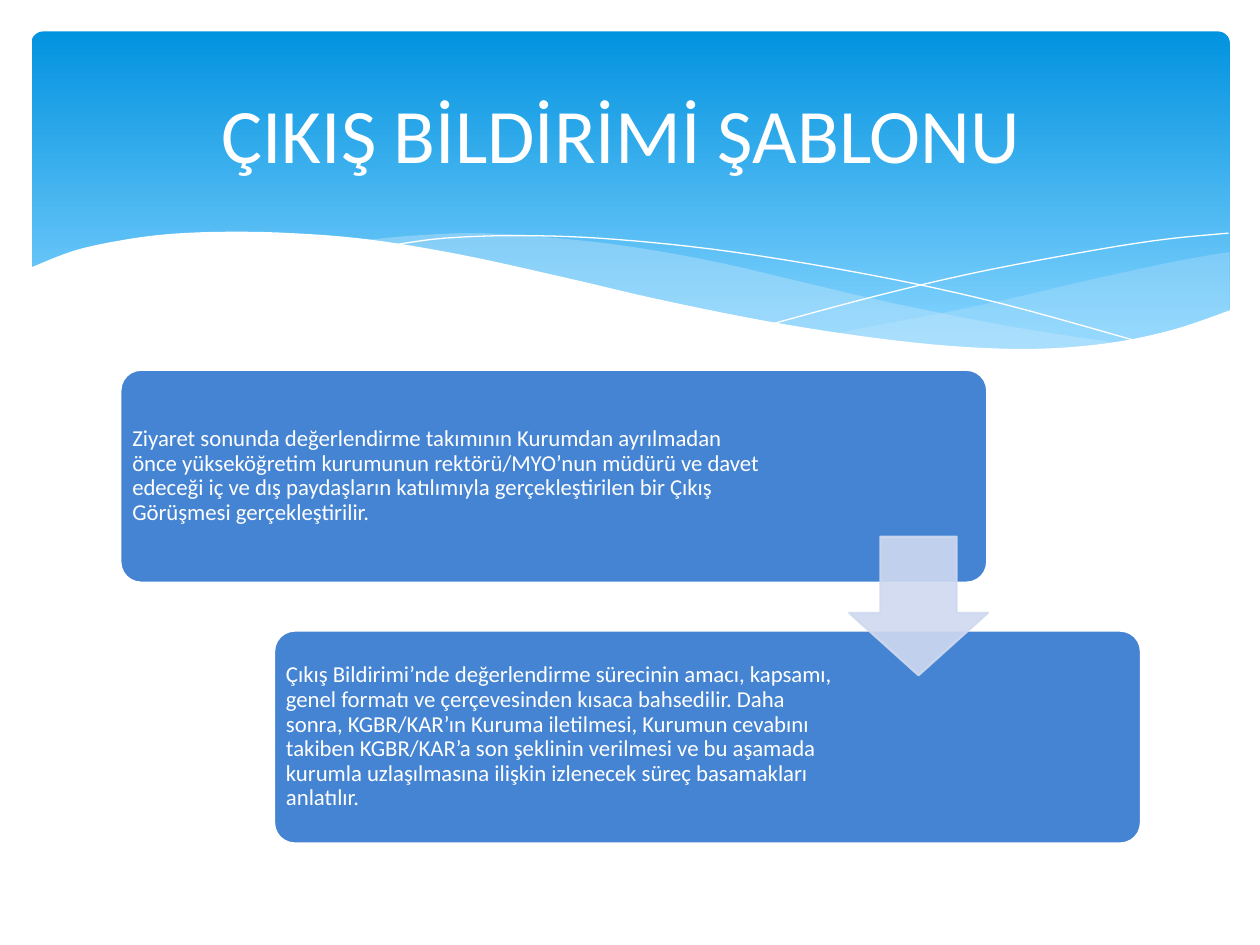
from pptx import Presentation
from pptx.dml.color import RGBColor
from pptx.enum.shapes import MSO_SHAPE
from pptx.enum.text import MSO_ANCHOR, PP_ALIGN
from pptx.oxml import parse_xml
from pptx.oxml.ns import nsdecls
from pptx.util import Inches, Pt

ROUNDED = MSO_SHAPE.ROUNDED_RECTANGLE
DOWN_ARROW = MSO_SHAPE.DOWN_ARROW
MIDDLE = MSO_ANCHOR.MIDDLE
CENTER, LEFT = PP_ALIGN.CENTER, PP_ALIGN.LEFT

COLUMNS, ROWS = 100, 75
TITLE_ONLY = 5
WHITE, STEP_BLUE, ARROW_BLUE, WAVE_BLUE = "FFFFFF", "4584D3", "CFD9EF", "C6E7FC"

# Wave outlines as key points (column, row); each list is one smooth edge
RIGHT_WAVE = [
    [(97.6, 20), (93.5, 20.7), (86.1, 22.3), (77.9, 24.2), (66.1, 26.5)],
    [(66.1, 26.5), (71.9, 27.2), (78.1, 27.7), (84.4, 27.7),
     (89.7, 27), (94.2, 25.9), (97.6, 24.7)],
]
MIDDLE_WAVE = [
    [(89.3, 27.3), (80.7, 26), (70.6, 24), (62.9, 22.2), (56.9, 20.8), (50.2, 19.6),
     (44.2, 18.9), (38, 18.5), (32.8, 18.7), (28.6, 19.1)],
    [(28.6, 19.1), (36.2, 20.3), (44.9, 22.2), (56.6, 24.8), (65, 26.4),
     (73.6, 27.5), (81.8, 27.8), (89.3, 27.3)],
]
FALLING_LINE = [[(30.9, 19.5), (35.3, 18.9), (41.6, 18.7), (48.9, 19), (58.2, 20),
                 (69.5, 21.9), (79.5, 24.1), (90.7, 27.2)]]
RISING_LINE = [[(61.3, 25.7), (69.5, 23.5), (77.6, 21.6), (86.6, 19.9),
                (92.4, 19), (97.5, 18.5)]]
WHITE_WAVE = [
    [(97.7, 24.6), (93, 26.2), (87.5, 27.3), (80.9, 27.7), (72.6, 27.2),
     (62.6, 25.8), (52.9, 23.9), (44.7, 22), (36.5, 20.2), (29.2, 19),
     (23, 18.5), (17.7, 18.4), (13.2, 18.6), (9.5, 19.1), (5.9, 19.9), (2.3, 21.3)],
    [(2.3, 32.9), (97.7, 32.9)],
]

STEPS = [
    (9.5, 29.3, 51.3,
     "Ziyaret sonunda değerlendirme takımının Kurumdan ayrılmadan önce "
     "yükseköğretim kurumunun rektörü/MYO’nun müdürü ve davet edeceği iç ve dış "
     "paydaşların katılımıyla gerçekleştirilen bir Çıkış Görüşmesi gerçekleştirilir."),
    (21.7, 50, 44.7,
     "Çıkış Bildirimi’nde değerlendirme sürecinin amacı, kapsamı, genel formatı ve "
     "çerçevesinden kısaca bahsedilir. Daha sonra, KGBR/KAR’ın Kuruma iletilmesi, "
     "Kurumun cevabını takiben KGBR/KAR’a son şeklinin verilmesi ve bu aşamada "
     "kurumla uzlaşılmasına ilişkin izlenecek süreç basamakları anlatılır."),
]
STEP_WIDTH, STEP_HEIGHT, STEP_INSET = 68.9, 17, 0.5


def rgb(color):
    return RGBColor.from_string(color)


def smooth_edge(knots, pieces=6):
    """Sample a Catmull-Rom curve through the knots."""
    padded = [knots[0], *knots, knots[-1]]
    points = [knots[0]]
    for a, b, c, d in zip(padded, padded[1:], padded[2:], padded[3:]):
        for piece in range(1, pieces + 1):
            t = piece / pieces
            points.append(tuple(
                q + 0.5 * t * (r - p + t * (2 * p - 5 * q + 4 * r - s
                                            + t * (3 * (q - r) + s - p)))
                for p, q, r, s in zip(a, b, c, d)))
    return points


class Deck:
    font = "Calibri"

    def __init__(self):
        self.presentation = Presentation()
        self.presentation.slide_width = Inches(10)
        self.presentation.slide_height = Inches(7.5)
        layout = self.presentation.slide_layouts[TITLE_ONLY]
        self.slide = self.presentation.slides.add_slide(layout)
        self.shapes = self.slide.shapes

    def at(self, column, row):
        return (round(self.presentation.slide_width * column / COLUMNS),
                round(self.presentation.slide_height * row / ROWS))

    def paint(self, shape, fill=None, opacity=100, line=None, line_width=0):
        shape.shadow.inherit = False
        if fill:
            shape.fill.solid()
            shape.fill.fore_color.rgb = rgb(fill)
        else:
            shape.fill.background()
        if line:
            shape.line.color.rgb = rgb(line)
            shape.line.width = Pt(line_width)
        else:
            shape.line.fill.background()
        if opacity < 100:
            for color in shape.element.spPr.xpath(".//a:srgbClr"):
                color.append(parse_xml(
                    f'<a:alpha {nsdecls("a")} val="{opacity * 1000}"/>'))

    def shape(self, kind, column, row, width, height, adjustments, **look):
        shape = self.shapes.add_shape(kind, *self.at(column, row), *self.at(width, height))
        for index, value in enumerate(adjustments):
            shape.adjustments[index] = value
        self.paint(shape, **look)
        return shape

    def wave(self, edges, **look):
        points = [self.at(*point) for edge in edges for point in smooth_edge(edge)]
        builder = self.shapes.build_freeform(*points[0])
        builder.add_line_segments(points[1:], close="fill" in look)
        self.paint(builder.convert_to_shape(), **look)

    def set_text(self, frame, wording, size, align):
        frame.word_wrap = True
        frame.vertical_anchor = MIDDLE
        frame.text = wording
        paragraph = frame.paragraphs[0]
        paragraph.alignment = align
        paragraph.font.name = self.font
        paragraph.font.size = Pt(size)
        paragraph.font.color.rgb = rgb(WHITE)
        return paragraph

    def title(self, column, row, width, height, wording):
        title = self.shapes.title
        title.left, title.top = self.at(column, row)
        title.width, title.height = self.at(width, height)
        self.set_text(title.text_frame, wording, 44, CENTER)
        # Bring the title in front of the banner
        title.element.getparent().append(title.element)

    def text(self, column, row, width, height, wording):
        box = self.shapes.add_textbox(*self.at(column, row), *self.at(width, height))
        frame = box.text_frame
        frame.margin_left = frame.margin_right = Inches(0.05)
        frame.margin_top = frame.margin_bottom = Inches(0.05)
        self.set_text(frame, wording, 13, LEFT).line_spacing = 0.9

    def banner(self, column, row, width, height, top_color, bottom_color):
        banner = self.shape(ROUNDED, column, row, width, height, [0.034])
        banner.fill.gradient()
        banner.fill.gradient_angle = 270
        for stop, color, position in zip(banner.fill.gradient_stops,
                                         (top_color, bottom_color), (0, 0.9)):
            stop.color.rgb = rgb(color)
            stop.position = position


def main():
    deck = Deck()

    # Banner with waves
    deck.banner(2.5, 2.5, 95.1, 27, "0293E0", "83D3FE")
    deck.wave(RIGHT_WAVE, fill=WAVE_BLUE, opacity=29)
    deck.wave(MIDDLE_WAVE, fill=WAVE_BLUE, opacity=40)
    deck.wave(FALLING_LINE, line=WHITE)
    deck.wave(RISING_LINE, line=WHITE)
    deck.wave(WHITE_WAVE, fill=WHITE)
    deck.title(5, 3.7, 90, 13.7, "ÇIKIŞ BİLDİRİMİ ŞABLONU ")

    # Process steps
    for column, row, text_width, wording in STEPS:
        deck.shape(ROUNDED, column, row, STEP_WIDTH, STEP_HEIGHT, [0.1],
                   fill=STEP_BLUE, line=WHITE, line_width=2)
        deck.text(column + STEP_INSET, row + STEP_INSET, text_width,
                  STEP_HEIGHT - 2 * STEP_INSET, wording)

    # Arrow from the first step to the second
    deck.shape(DOWN_ARROW, 67.4, 42.6, 11, 11, [0.55, 0.45],
               fill=ARROW_BLUE, opacity=90, line=ARROW_BLUE, line_width=1.25)

    deck.presentation.save("out.pptx")


if __name__ == "__main__":
    main()
